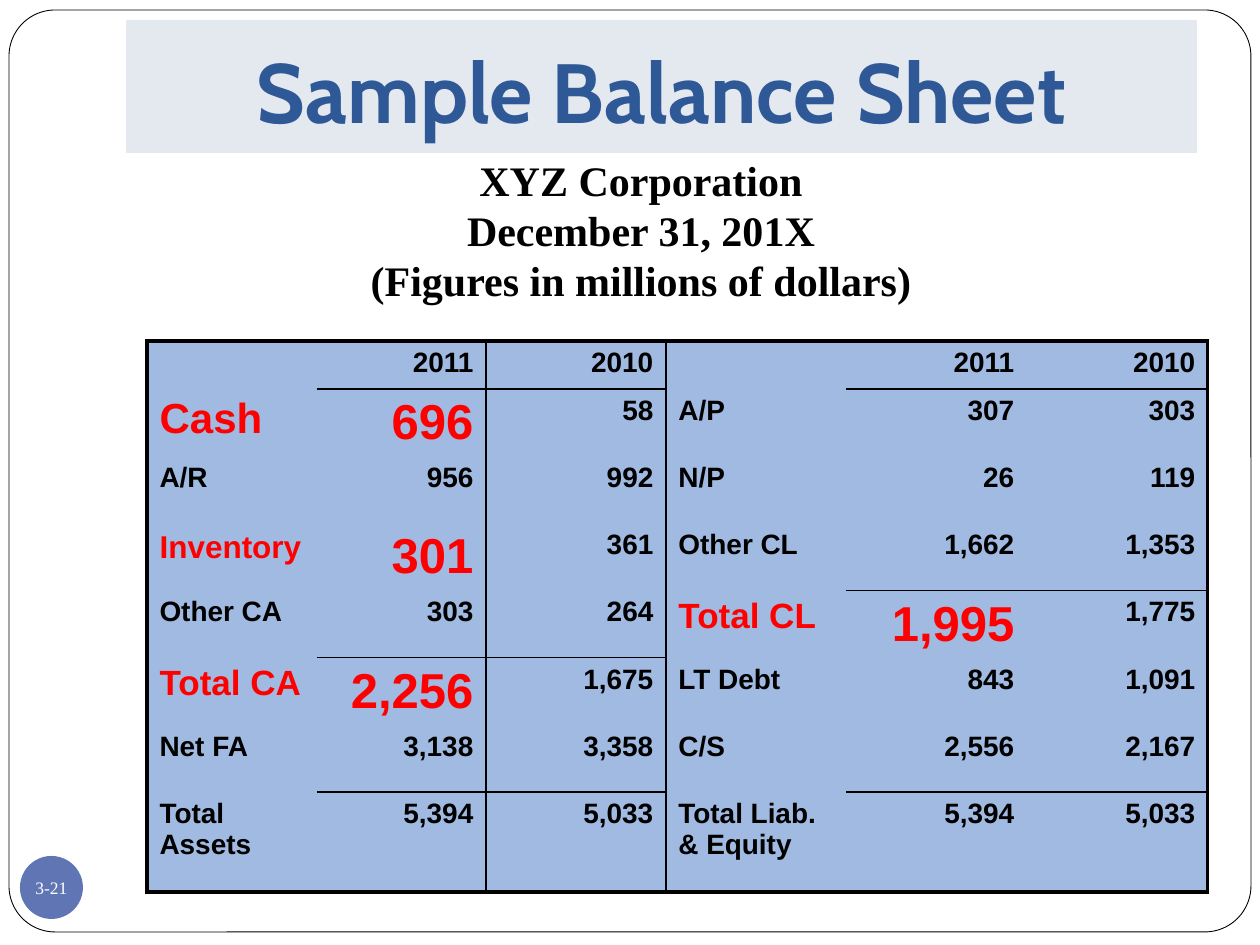
import dataclasses

import lxml.etree
import pptx
import pptx.dml.color
import pptx.enum.shapes
import pptx.enum.text
import pptx.oxml.ns
import pptx.util

SCALE = 914400 / 126  # EMU in one px
ALIGN = pptx.enum.text.PP_ALIGN
ANCHOR = pptx.enum.text.MSO_ANCHOR
SHAPE = pptx.enum.shapes.MSO_SHAPE
rgb = pptx.dml.color.RGBColor.from_string
qn = pptx.oxml.ns.qn


@dataclasses.dataclass(frozen=True)
class Theme:
    white: str = "FFFFFF"
    black: str = "000000"
    red: str = "FF0000"
    badge: str = "6076B4"
    band: str = "E4E9EF"
    title: str = "2F5897"
    cell: str = "A0BAE1"
    title_font: str = "Cabin"
    table_font: str = "Arial"
    serif: str = "Times New Roman"
    title_size: int = 48
    heading_size: int = 24
    body_size: int = 16
    figure_size: int = 28
    badge_size: int = 10


theme = Theme()


def px(*lengths):
    return [pptx.util.Emu(round(n * SCALE)) for n in lengths]


def write(tf, text, font, size, color=theme.black, bold=True, align=ALIGN.CENTER, before=None):
    for i, line in enumerate(text.split("\n")):
        p = tf.paragraphs[0] if i == 0 else tf.add_paragraph()
        p.alignment = align
        if before:
            space = lxml.etree.SubElement(p._p.get_or_add_pPr(), qn("a:spcBef"))
            lxml.etree.SubElement(space, qn("a:spcPct"), val=str(before * 1000))
        r = p.add_run()
        r.text = line
        r.font.name, r.font.size, r.font.bold = font, pptx.util.Pt(size), bold
        r.font.color.rgb = rgb(color)


prs = pptx.Presentation()
prs.slide_width, prs.slide_height = px(1260, 945)
s = prs.slides.add_slide(prs.slide_layouts[5])

# Rounded page frame, behind everything
frame = s.shapes.add_shape(SHAPE.ROUNDED_RECTANGLE, *px(9, 10, 1242, 922))
frame.adjustments[0] = 0.05
frame.shadow.inherit = False
frame.fill.solid()
frame.fill.fore_color.rgb = rgb(theme.white)
frame.line.color.rgb = rgb(theme.black)
frame.line.width = pptx.util.Pt(0.5)
s.shapes._spTree.insert(2, frame._element)

# Page number badge
badge = s.shapes.add_shape(SHAPE.OVAL, *px(20, 856, 63, 63))
badge.shadow.inherit = False
badge.fill.solid()
badge.fill.fore_color.rgb = rgb(theme.badge)
badge.line.fill.background()
tf = badge.text_frame
tf.margin_left = tf.margin_top = tf.margin_right = tf.margin_bottom = 0
tf.word_wrap = False
tf.vertical_anchor = ANCHOR.MIDDLE
write(tf, "3-21", theme.serif, theme.badge_size, theme.white, bold=False)

# Title band
title = s.shapes.title
title.left, title.top, title.width, title.height = px(126, 20, 1071, 133)
title.fill.solid()
title.fill.fore_color.rgb = rgb(theme.band)
tf = title.text_frame
tf.auto_size = pptx.enum.text.MSO_AUTO_SIZE.NONE
tf.vertical_anchor = ANCHOR.BOTTOM
tf.margin_bottom = pptx.util.Inches(0.1)
write(tf, "Sample Balance Sheet", theme.title_font, theme.title_size, theme.title)

# Balance sheet: text, with the sizes of the red entries by (row, column)
ROWS = [
    ["", "2011", "2010", "", "2011", "2010"],
    ["Cash", "696", "58", "A/P", "307", "303"],
    ["A/R", "956", "992", "N/P", "26", "119"],
    ["Inventory", "301", "361", "Other CL", "1,662", "1,353"],
    ["Other CA", "303", "264", "Total CL", "1,995", "1,775"],
    ["Total CA", "2,256", "1,675", "LT Debt", "843", "1,091"],
    ["Net FA", "3,138", "3,358", "C/S", "2,556", "2,167"],
    ["Total Assets", "5,394", "5,033", "Total Liab. & Equity", "5,394", "5,033"],
]
RED_SIZES = {(1, 0): 24, (3, 0): 18, (4, 3): 20, (5, 0): 20}
RED_SIZES |= dict.fromkeys([(1, 1), (3, 1), (4, 4), (5, 1)], theme.figure_size)
WIDTHS = [170, 169, 180, 180, 181, 181]
HEIGHTS = [47] + [67] * 6 + [100]

# Rule weights: by column edge, and by row edge with the columns it spans
OUTER, INNER = 2.25, 1
V_RULES = {0: OUTER, 2: INNER, 3: INNER, 6: OUTER}
H_RULES = {(edge, c): OUTER for edge in (0, 8) for c in range(6)}
for edge, columns in {1: (1, 2, 4, 5), 4: (4, 5), 5: (1, 2), 7: (1, 2, 4, 5)}.items():
    H_RULES |= {(edge, c): INNER for c in columns}

table = s.shapes.add_table(8, 6, *px(147, 341, sum(WIDTHS), sum(HEIGHTS))).table
table.first_row = table.horz_banding = False
for column, width in zip(table.columns, px(*WIDTHS)):
    column.width = width
for row, height in zip(table.rows, px(*HEIGHTS)):
    row.height = height

for r, texts in enumerate(ROWS):
    for c, text in enumerate(texts):
        cell = table.cell(r, c)
        cell.fill.solid()
        cell.fill.fore_color.rgb = rgb(theme.cell)
        write(cell.text_frame, text, theme.table_font,
              RED_SIZES.get((r, c), theme.body_size),
              theme.red if (r, c) in RED_SIZES else theme.black,
              align=ALIGN.LEFT if c in (0, 3) else ALIGN.RIGHT, before=20)
        borders = {"a:lnL": V_RULES.get(c), "a:lnR": V_RULES.get(c + 1),
                   "a:lnT": H_RULES.get((r, c)), "a:lnB": H_RULES.get((r + 1, c))}
        for i, (tag, weight) in enumerate(borders.items()):
            ln = lxml.etree.Element(qn(tag), w=str(pptx.util.Pt(weight or 0)))
            if weight:
                fill = lxml.etree.SubElement(ln, qn("a:solidFill"))
                lxml.etree.SubElement(fill, qn("a:srgbClr"), val=theme.black)
            else:
                lxml.etree.SubElement(ln, qn("a:noFill"))
            cell._tc.get_or_add_tcPr().insert(i, ln)

# Statement heading
heading = s.shapes.add_textbox(*px(242, 148, 798, 165))
tf = heading.text_frame
tf.word_wrap = True
tf.auto_size = pptx.enum.text.MSO_AUTO_SIZE.SHAPE_TO_FIT_TEXT
write(tf, "XYZ Corporation\nDecember 31, 201X\n(Figures in millions of dollars)",
      theme.serif, theme.heading_size)

prs.save("out.pptx")
